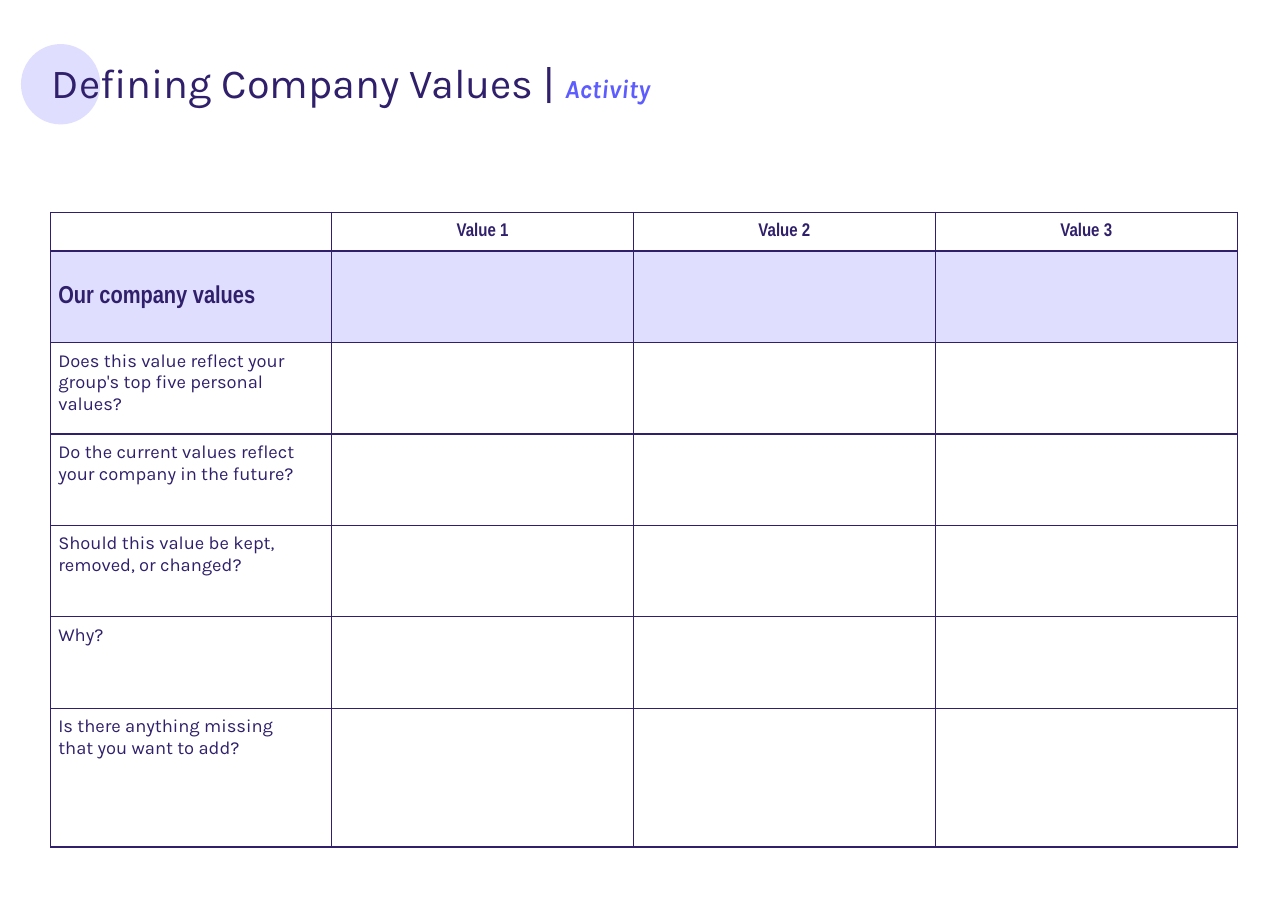
"""Build the company values activity slide."""
import pptx
import pptx.util
import pptx.dml.color
import pptx.enum.shapes
import pptx.enum.text
import pptx.oxml.ns
from lxml import etree

Inches = pptx.util.Inches
Pt = pptx.util.Pt
INK, TINT, BLUE = "30206B", "DFDEFF", "5D5CFF"
SANS, HEAD = "Karla", "Arial Narrow"

TITLE = [("Defining Company Values | ", 27, INK, False),
         ("Activity", 17, BLUE, True)]
VALUES = ["Value 1", "Value 2", "Value 3"]
LABELS = ["", "Our company values",
          "Does this value reflect your group's top five personal values?",
          "Do the current values reflect your company in the future?",
          "Should this value be kept, removed, or changed?",
          "Why?",
          "Is there anything missing\nthat you want to add?"]
COLS = [2.55] + [2.74] * 3
ROWS = [0.35] + [0.83] * 5 + [1.26]


def color(code):
    return pptx.dml.color.RGBColor.from_string(code)


def add_run(para, text, size, face, shade=INK, bold=False, slant=False):
    run = para.add_run()
    run.text = text
    font = run.font
    font.size, font.name = Pt(size), face
    font.bold, font.italic = bold, slant
    font.color.rgb = color(shade)


def add_node(parent, tag, **attrs):
    return etree.SubElement(parent, pptx.oxml.ns.qn(tag), **attrs)


def add_edges(cell):
    props = cell._tc.get_or_add_tcPr()
    for side in ("L", "R", "T", "B"):
        line = add_node(props, "a:ln" + side, w=str(Pt(1)))
        add_node(add_node(line, "a:solidFill"), "a:srgbClr", val=INK)


def fill_cell(cell, row, text):
    add_edges(cell)
    if row == 1:
        cell.fill.solid()
        cell.fill.fore_color.rgb = color(TINT)
    else:
        cell.fill.background()
    cell.margin_left = cell.margin_right = Inches(0.07)
    cell.margin_top = cell.margin_bottom = Inches(0.07)
    anchor = pptx.enum.text.MSO_ANCHOR
    cell.vertical_anchor = anchor.MIDDLE if row < 2 else anchor.TOP
    para = cell.text_frame.paragraphs[0]
    if row == 0:
        para.alignment = pptx.enum.text.PP_ALIGN.CENTER
    if not text:
        add_node(para._p, "a:endParaRPr", sz="1200")
        return
    for i, part in enumerate(text.split("\n")):
        if i:
            para.add_line_break()
        add_run(para, part, 16 if row == 1 else 12,
                HEAD if row < 2 else SANS, bold=row < 2)


def add_dot(slide):
    dot = slide.shapes.add_shape(
        pptx.enum.shapes.MSO_SHAPE.OVAL,
        Inches(0.19), Inches(0.4), Inches(0.72), Inches(0.73))
    dot.shadow.inherit = False
    dot.fill.solid()
    dot.fill.fore_color.rgb = color(TINT)
    dot.line.fill.background()
    slide.shapes._spTree.insert(2, dot._element)


def add_title(slide):
    title = slide.shapes.title
    title.left, title.top = Inches(0.47), Inches(0.57)
    title.width, title.height = Inches(9.1), Inches(0.84)
    frame = title.text_frame
    frame.margin_left = frame.margin_right = 0
    frame.margin_top = frame.margin_bottom = 0
    frame.word_wrap = True
    frame.auto_size = pptx.enum.text.MSO_AUTO_SIZE.NONE
    frame.vertical_anchor = pptx.enum.text.MSO_ANCHOR.TOP
    para = frame.paragraphs[0]
    para.alignment = pptx.enum.text.PP_ALIGN.LEFT
    para.line_spacing = 0.9
    for text, size, shade, strong in TITLE:
        add_run(para, text, size, SANS, shade, strong, strong)


def add_grid(slide):
    grid = slide.shapes.add_table(
        len(ROWS), len(COLS), Inches(0.46), Inches(1.93),
        Inches(sum(COLS)), Inches(sum(ROWS))).table
    grid.first_row = grid.horz_banding = False
    for col, width in zip(grid.columns, COLS):
        col.width = Inches(width)
    for r, height in enumerate(ROWS):
        grid.rows[r].height = Inches(height)
        texts = [LABELS[r]] + (VALUES if r == 0 else [""] * len(VALUES))
        for c, text in enumerate(texts):
            fill_cell(grid.cell(r, c), r, text)


def main():
    deck = pptx.Presentation()
    deck.slide_width, deck.slide_height = Inches(11.69), Inches(8.27)
    slide = deck.slides.add_slide(deck.slide_layouts[5])
    add_dot(slide)
    add_title(slide)
    add_grid(slide)
    deck.save("out.pptx")


if __name__ == "__main__":
    main()
